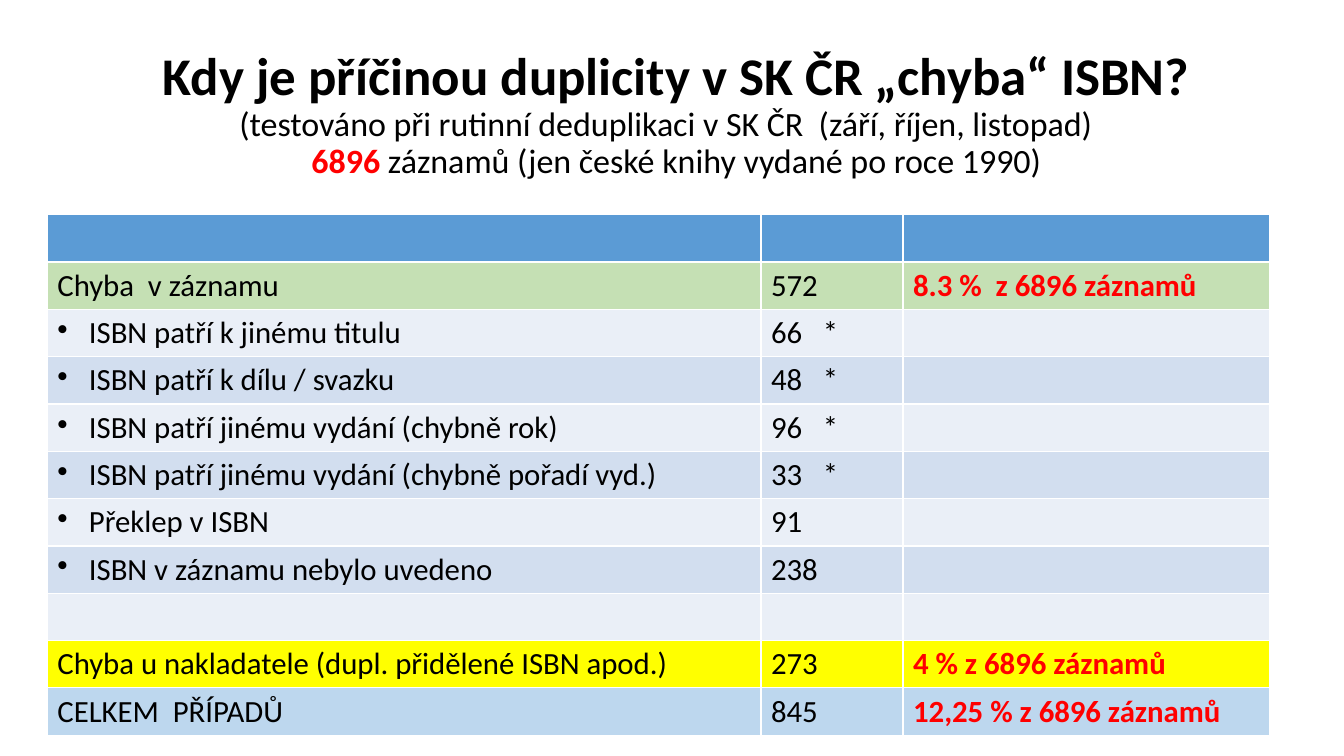
"""Build the slide on duplicate records caused by ISBN errors."""
import pptx
import pptx.dml.color
import pptx.enum.text
import pptx.oxml
import pptx.oxml.ns
import pptx.util

Pt = pptx.util.Pt
RGB = pptx.dml.color.RGBColor

BLACK = RGB(0, 0, 0)
RED = RGB(255, 0, 0)
BLUE = RGB(0x5B, 0x9B, 0xD5)
GREEN = RGB(0xC5, 0xE0, 0xB4)
YELLOW = RGB(255, 255, 0)
SKY = RGB(0xBD, 0xD7, 0xEE)
BANDS = (RGB(0xEA, 0xEF, 0xF7), RGB(0xD2, 0xDE, 0xEF))
FONT = "Calibri"

TITLE = [
    (37.8, 0, [("Kdy je příčinou duplicity v SK ČR „chyba“ ISBN?", BLACK, True)]),
    (24.3, 15, [("(testováno při rutinní deduplikaci v SK ČR  (září, říjen, listopad)", BLACK, False)]),
    (24.3, 0, [("6896", RED, True),
               (" záznamů (jen české knihy vydané po roce 1990)", BLACK, False)]),
]
CAUSES = [
    ("ISBN patří k jinému titulu", "66   *"),
    ("ISBN patří k dílu / svazku", "48   *"),
    ("ISBN patří jinému vydání (chybně rok)", "96   *"),
    ("ISBN patří jinému vydání (chybně pořadí vyd.)", "33   *"),
    ("Překlep v ISBN", "91"),
    ("ISBN v záznamu nebylo uvedeno", "238"),
    ("", ""),
]
ROWS = [
    (BLUE, ("", "", "")),
    (GREEN, ("Chyba  v záznamu", "572", "8.3 %  z 6896 záznamů")),
    *[(BANDS[i % 2], (*cause, "")) for i, cause in enumerate(CAUSES)],
    (YELLOW, ("Chyba u nakladatele (dupl. přidělené ISBN apod.)", "273", "4 % z 6896 záznamů")),
    (SKY, ("CELKEM  PŘÍPADŮ", "845", "12,25 % z 6896 záznamů")),
]
WIDTHS = (509.8, 101.5, 262)
HIGH = 33.8
INDENT = Pt(22.5)


def style(font, size, color, bold):
    font.name, font.size, font.bold = FONT, Pt(size), bold
    font.color.rgb = color


def add_xml(parent, text):
    space = pptx.oxml.ns.nsdecls("a")
    parent.append(pptx.oxml.parse_xml(text.replace(" ", f" {space} ", 1)))


def add_title(slide):
    box = slide.shapes.add_textbox(Pt(17.3), Pt(13.5), Pt(931.7), Pt(137.5))
    frame = box.text_frame
    frame.word_wrap = True
    frame.vertical_anchor = pptx.enum.text.MSO_ANCHOR.MIDDLE
    for i, (size, inset, parts) in enumerate(TITLE):
        para = frame.add_paragraph() if i else frame.paragraphs[0]
        para.alignment = pptx.enum.text.PP_ALIGN.CENTER
        para.line_spacing = 0.9
        para._p.get_or_add_pPr().set("marR", str(Pt(inset)))
        for text, color, bold in parts:
            run = para.add_run()
            run.text = text
            style(run.font, size, color, bold)


def fill_cell(cell, text, color, last, bullet):
    cell.text_frame.text = text
    para = cell.text_frame.paragraphs[0]
    style(para.font, 22, BLACK, False)
    for run in para.runs:
        style(run.font, 22, RED if last else BLACK, last)
    if bullet:
        props = para._p.get_or_add_pPr()
        props.set("marL", str(INDENT))
        props.set("indent", str(-INDENT))
        props.insert(0, pptx.oxml.parse_xml(
            f'<a:buChar {pptx.oxml.ns.nsdecls("a")} char="•"/>'))
    props = cell._tc.get_or_add_tcPr()
    for side in "LRTB":
        add_xml(props, f'<a:ln{side} w="{Pt(1)}"><a:solidFill>'
                       f'<a:srgbClr val="FFFFFF"/></a:solidFill></a:ln{side}>')
    cell.fill.solid()
    cell.fill.fore_color.rgb = color


def add_table(slide):
    frame = slide.shapes.add_table(len(ROWS), len(WIDTHS), Pt(33.8), Pt(153.4),
                                   Pt(sum(WIDTHS)), Pt(HIGH * len(ROWS)))
    table = frame.table
    table.first_row = table.horz_banding = False
    for col, width in zip(table.columns, WIDTHS):
        col.width = Pt(width)
    for r, (color, texts) in enumerate(ROWS):
        table.rows[r].height = Pt(HIGH)
        for c, text in enumerate(texts):
            bullet = c == 0 and text != "" and color in BANDS
            fill_cell(table.cell(r, c), text, color, c == 2, bullet)


def main():
    deck = pptx.Presentation()
    deck.slide_width, deck.slide_height = Pt(960), Pt(540)
    slide = deck.slides.add_slide(deck.slide_layouts[6])
    add_title(slide)
    add_table(slide)
    deck.save("out.pptx")


if __name__ == "__main__":
    main()
